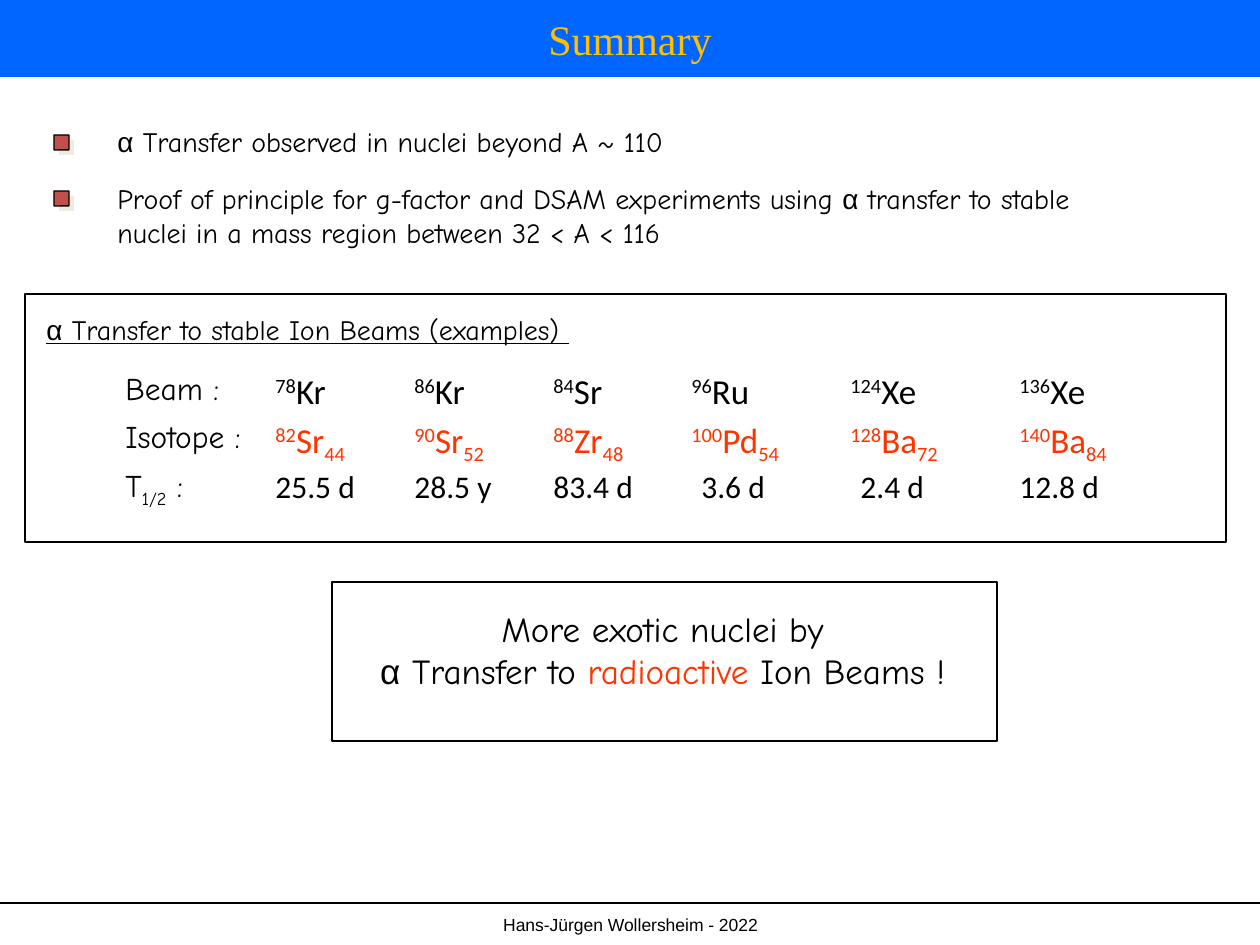
import pptx
import pptx.dml.color
import pptx.enum.shapes
import pptx.enum.text
import pptx.oxml.ns
import pptx.util
from dataclasses import dataclass
from lxml import etree

EMU_PER_PX = 914400 / 126
SHAPES = pptx.enum.shapes.MSO_SHAPE
ALIGN = pptx.enum.text.PP_ALIGN
ANCHOR = pptx.enum.text.MSO_ANCHOR
AUTO = pptx.enum.text.MSO_AUTO_SIZE
SUPER, SUB = 30, -25


@dataclass(frozen=True)
class Theme:
    ink: str = "000000"
    paper: str = "FFFFFF"
    band: str = "0066FF"
    title: str = "FFC000"
    accent: str = "FF3300"
    marker: str = "C0504D"
    marker_shade: str = "EEECE1"
    title_font: str = "Times New Roman"
    hand_font: str = "Comic Neue"
    data_font: str = "Calibri"
    plain_font: str = "Arial"
    title_size: int = 24
    large: int = 20
    medium: int = 18
    body: int = 16
    footer: int = 10


T = Theme()
ALPHA = ("α", {"font": T.plain_font})


def px(n):
    return pptx.util.Emu(round(n * EMU_PER_PX))


def rgb(value):
    return pptx.dml.color.RGBColor.from_string(value)


def style(font, size, name, color):
    font.size = pptx.util.Pt(size)
    font.name = name
    font.color.rgb = rgb(color)


def add_runs(p, runs):
    """Each run is a string or (text, {font, color, base})."""
    for item in runs:
        text, look = (item, {}) if isinstance(item, str) else item
        r = p.add_run()
        r.text = text
        if "font" in look:
            r.font.name = look["font"]
        if "color" in look:
            r.font.color.rgb = rgb(look["color"])
        if "base" in look:
            r.font._element.set("baseline", str(look["base"] * 1000))


def add_text(s, box, paragraphs, size, font, color=T.ink, align=ALIGN.LEFT,
             anchor=ANCHOR.TOP, wrap=True, underline=None):
    tf = s.shapes.add_textbox(*map(px, box)).text_frame
    tf.word_wrap = wrap
    tf.auto_size = AUTO.SHAPE_TO_FIT_TEXT
    tf.vertical_anchor = anchor
    for i, runs in enumerate(paragraphs):
        p = tf.add_paragraph() if i else tf.paragraphs[0]
        p.alignment = align
        style(p.font, size, font, color)
        p.font.underline = underline
        add_runs(p, runs)


def add_box(s, box, fill, outlined=True, kind=SHAPES.RECTANGLE):
    sp = s.shapes.add_shape(kind, *map(px, box))
    sp.shadow.inherit = False
    sp.fill.solid()
    sp.fill.fore_color.rgb = rgb(fill)
    if outlined:
        sp.line.color.rgb = rgb(T.ink)
        sp.line.width = pptx.util.Pt(0.75)
    else:
        sp.line.fill.background()
    return sp


def add_title(s, text):
    sp = s.shapes.title
    sp.left, sp.top, sp.width, sp.height = map(px, (0, 0, 1260, 77))
    sp.fill.solid()
    sp.fill.fore_color.rgb = rgb(T.band)
    tf = sp.text_frame
    tf.auto_size = AUTO.NONE
    tf.vertical_anchor = ANCHOR.MIDDLE
    p = tf.paragraphs[0]
    p.alignment = ALIGN.CENTER
    style(p.font, T.title_size, T.title_font, T.title)
    add_runs(p, [text])


def add_footer(s, text):
    line = s.shapes.add_connector(pptx.enum.shapes.MSO_CONNECTOR.STRAIGHT,
                                  *map(px, (0, 903, 1260, 903)))
    line.line.color.rgb = rgb(T.ink)
    line.line.width = pptx.util.Pt(1.5)
    etree.SubElement(line._element.spPr, pptx.oxml.ns.qn("a:effectLst"))
    add_text(s, (1, 908, 1259, 37), [[text]], T.footer, T.plain_font,
             align=ALIGN.CENTER)


def add_bullet(s, marker_y, box, runs):
    # Square marker over its offset shade
    for offset, fill, outlined in ((5, T.marker_shade, False),
                                   (0, T.marker, True)):
        sp = add_box(s, (54 + offset, marker_y + offset, 15, 15), fill,
                     outlined, SHAPES.ROUNDED_RECTANGLE)
        sp.adjustments[0] = 0.01
    add_text(s, box, [runs], T.body, T.hand_font, anchor=ANCHOR.MIDDLE)


def add_reaction(s, x, beam, isotope, half_life):
    """One column: beam nuclide, product isotope and its half-life."""
    mass, symbol = beam
    add_text(s, (x, 363, 100 if len(mass) == 2 else 115, 54),
             [[(mass, {"base": SUPER}), symbol]], T.large, T.data_font)
    mass, symbol, neutrons = isotope
    add_text(s, (x, 412, 120 if len(mass) == 2 else 139, 54),
             [[(mass, {"base": SUPER}), symbol, (neutrons, {"base": SUB})]],
             T.large, T.data_font, T.accent)
    short = len(half_life) < 6
    add_text(s, (x + 10 * short, 461, 100 if short else 118, 50),
             [[half_life]], T.medium, T.data_font)


def main():
    prs = pptx.Presentation()
    prs.slide_width, prs.slide_height = px(1260), px(945)
    s = prs.slides.add_slide(prs.slide_layouts[5])

    add_title(s, "Summary")
    add_footer(s, "Hans-Jürgen Wollersheim - 2022")

    # Findings
    add_bullet(s, 135, (105, 118, 625, 47),
               [ALPHA, " Transfer observed in nuclei beyond A ~ 110"])
    add_bullet(s, 191, (105, 175, 1022, 81),
               ["Proof of principle for g-factor and DSAM experiments using ",
                ALPHA, " transfer to stable nuclei in a mass region between "
                "32 < A < 116"])

    # Stable beam examples
    add_box(s, (25, 294, 1201, 248), T.paper)
    add_text(s, (34, 306, 596, 47),
             [[ALPHA, " Transfer to stable Ion Beams (examples) "]],
             T.body, T.hand_font, wrap=False, underline=True)
    labels = [(["Beam :"], 129), (["Isotope :"], 179),
              (["T", ("1/2", {"base": SUB}), " :"], 110)]
    for i, (runs, width) in enumerate(labels):
        add_text(s, (113, 363 + round(48.5 * i), width, 50), [runs],
                 T.medium, T.hand_font)
    reactions = [
        (263, ("78", "Kr"), ("82", "Sr", "44"), "25.5 d"),
        (402, ("86", "Kr"), ("90", "Sr", "52"), "28.5 y"),
        (541, ("84", "Sr"), ("88", "Zr", "48"), "83.4 d"),
        (679, ("96", "Ru"), ("100", "Pd", "54"), "3.6 d"),
        (838, ("124", "Xe"), ("128", "Ba", "72"), "2.4 d"),
        (1007, ("136", "Xe"), ("140", "Ba", "84"), "12.8 d"),
    ]
    for reaction in reactions:
        add_reaction(s, *reaction)

    # Outlook
    add_box(s, (332, 582, 665, 159), T.paper)
    add_text(s, (343, 601, 651, 97),
             [["More exotic nuclei by "],
              [ALPHA, " Transfer to ", ("radioactive", {"color": T.accent}),
               " Ion Beams ! "]],
             T.large, T.hand_font, align=ALIGN.CENTER, wrap=False)

    prs.save("out.pptx")


if __name__ == "__main__":
    main()
